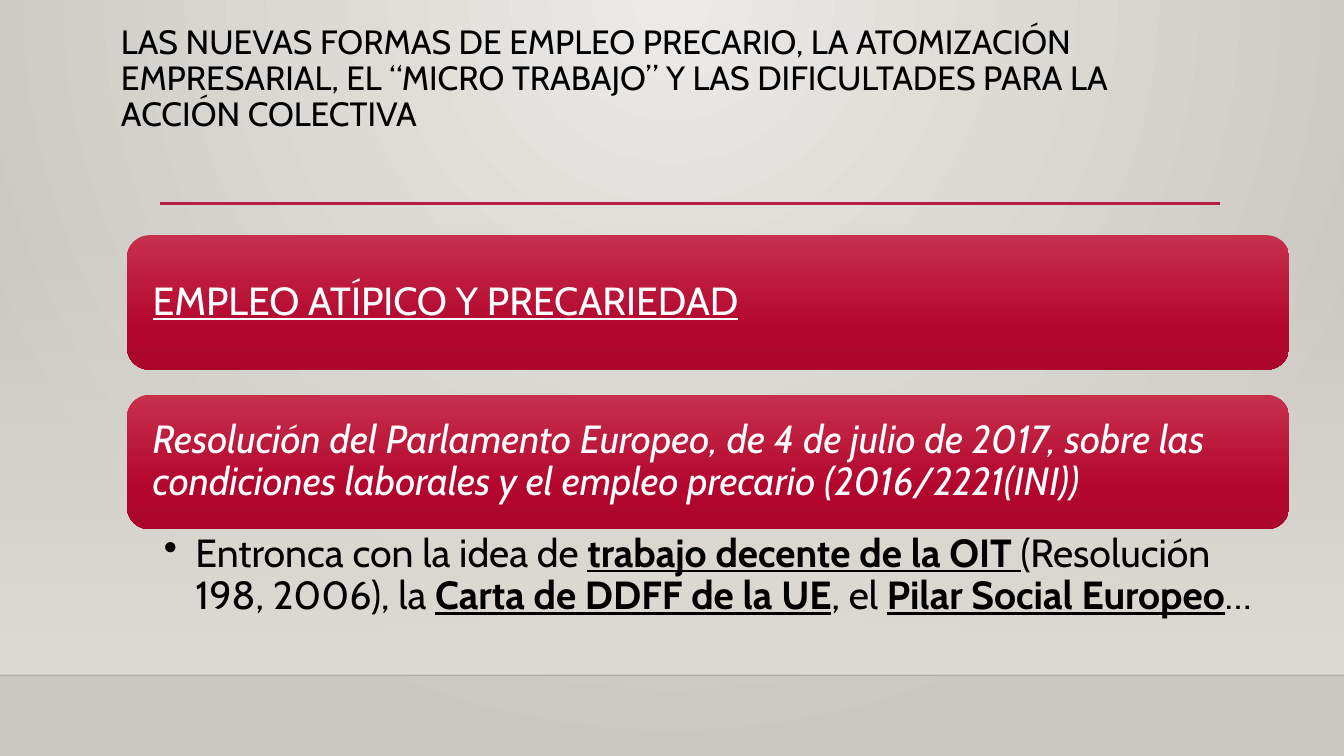
import pptx
import pptx.util
import pptx.dml.color
import pptx.enum.shapes
import pptx.enum.text
import pptx.oxml
import pptx.oxml.ns
from dataclasses import dataclass
from typing import Any

COLS, ROWS = 160, 90
WIDE, HIGH = pptx.util.Inches(13.33), pptx.util.Inches(7.5)
FONT = "Cabin"
HEX = {
    "black": "000000", "white": "FFFFFF", "rule": "B71E42", "edge": "000001",
    "pale": "ECEAE7", "stone": "CAC7C1", "wall": "DFDBD5",
    "rose": "C7304C", "red": "B3062F", "wine": "AA062C",
}
KIND = pptx.enum.shapes.MSO_SHAPE
ANCHOR = pptx.enum.text.MSO_ANCHOR
NS = pptx.oxml.ns.nsdecls("a")
LEFT, SPAN = 15.12, 138.36
TOP, TALL, STEP = 28, 16, 19


@dataclass
class Stop:
    at: int
    color: str
    alpha: int = 100


@dataclass
class Rule:
    left: float
    right: float
    row: float
    color: str
    width: float
    alpha: int = 100


@dataclass
class Bar:
    text: str
    under: bool = False
    slant: bool = False


@dataclass
class Piece:
    text: str
    strong: bool = False


RULES = [
    Rule(0, COLS, 80.4, "edge", 1, 20),
    Rule(19.08, 145.2, 24.24, "rule", 2.5),
]
BARS = [
    Bar("EMPLEO ATÍPICO Y PRECARIEDAD", under=True),
    Bar("Resolución del Parlamento Europeo, de 4 de julio de 2017, sobre las "
        "condiciones laborales y el empleo precario (2016/2221(INI))", slant=True),
]
TITLE = ("LAS NUEVAS FORMAS DE EMPLEO PRECARIO, LA ATOMIZACIÓN EMPRESARIAL, "
         "EL “MICRO TRABAJO” Y LAS DIFICULTADES PARA LA ACCIÓN COLECTIVA")
PIECES = [
    Piece("Entronca con la idea de "),
    Piece("trabajo decente de la OIT ", True),
    Piece("(Resolución 198, 2006), la "),
    Piece("Carta de DDFF de la UE", True),
    Piece(", el "),
    Piece("Pilar Social Europeo", True),
    Piece("…"),
]


def col(n: float) -> int:
    return round(WIDE * n / COLS)


def row(n: float) -> int:
    return round(HIGH * n / ROWS)


def rgb(name: str) -> Any:
    return pptx.dml.color.RGBColor.from_string(HEX[name])


def blend(fill: Any, root: Any, stops: list[Stop], round_: bool = False) -> None:
    fill.gradient()
    grad = root.find(".//" + pptx.oxml.ns.qn("a:gradFill"))
    marks = "".join(
        f'<a:gs pos="{s.at * 1000}"><a:srgbClr val="{HEX[s.color]}">'
        f'<a:alpha val="{s.alpha * 1000}"/></a:srgbClr></a:gs>' for s in stops)
    shade = ('<a:path path="circle"><a:fillToRect l="43000" r="43000" b="100000"/></a:path>'
             if round_ else '<a:lin ang="5400000" scaled="0"/>')
    fresh = pptx.oxml.parse_xml(
        f'<a:gradFill {NS} rotWithShape="1"><a:gsLst>{marks}</a:gsLst>{shade}</a:gradFill>')
    grad.getparent().replace(grad, fresh)


def block(slide: Any, kind: Any, x: float, y: float, w: float, h: float,
          stops: list[Stop]) -> Any:
    shape = slide.shapes.add_shape(kind, col(x), row(y), col(w), row(h))
    shape.shadow.inherit = False
    shape.line.fill.background()
    blend(shape.fill, shape._element.spPr, stops)
    return shape


def draw_rule(slide: Any, rule: Rule) -> None:
    line = slide.shapes.add_connector(
        pptx.enum.shapes.MSO_CONNECTOR.STRAIGHT,
        col(rule.left), row(rule.row), col(rule.right), row(rule.row))
    line.line.color.rgb = rgb(rule.color)
    line.line.width = pptx.util.Pt(rule.width)
    props = line._element.spPr
    tint = props.find(".//" + pptx.oxml.ns.qn("a:srgbClr"))
    tint.append(pptx.oxml.parse_xml(f'<a:alpha {NS} val="{rule.alpha * 1000}"/>'))
    props.append(pptx.oxml.parse_xml(f"<a:effectLst {NS}/>"))


def frame(shape: Any, side: float, end: float, edge: float, anchor: Any) -> Any:
    text = shape.text_frame
    text.word_wrap = True
    text.vertical_anchor = anchor
    text.margin_left, text.margin_right = col(side), col(end)
    text.margin_top = text.margin_bottom = row(edge)
    return text.paragraphs[0]


def style(para: Any, size: int, color: str) -> None:
    para.alignment = pptx.enum.text.PP_ALIGN.LEFT
    para.line_spacing = 0.9
    para.font.name = FONT
    para.font.size = pptx.util.Pt(size)
    para.font.color.rgb = rgb(color)


def draw_bar(slide: Any, bar: Bar, y: float) -> None:
    shape = block(slide, KIND.ROUNDED_RECTANGLE, LEFT, y, SPAN, TALL,
                  [Stop(0, "rose"), Stop(69, "red"), Stop(100, "wine")])
    para = frame(shape, 2.28, 2.28, 2.28, ANCHOR.MIDDLE)
    para.text = bar.text
    style(para, 28, "white")
    para.font.underline = bar.under
    para.font.italic = bar.slant


def draw_title(slide: Any) -> None:
    box = slide.shapes.add_textbox(col(13.2), row(2.4), col(124.56), row(15))
    para = frame(box, 1.2, 1.2, 0.6, ANCHOR.TOP)
    para.text = TITLE
    style(para, 24, "black")


def draw_note(slide: Any, y: float) -> None:
    box = slide.shapes.add_textbox(col(LEFT), row(y), col(SPAN), row(15.84))
    para = frame(box, 4.4, 2.64, 0.48, ANCHOR.TOP)
    props = para._p.get_or_add_pPr()
    props.set("marL", str(col(3.75)))
    props.set("indent", str(-col(3.75)))
    props.append(pptx.oxml.parse_xml(f'<a:buChar {NS} char="•"/>'))
    for piece in PIECES:
        run = para.add_run()
        run.text = piece.text
        run.font.bold = piece.strong
        run.font.underline = piece.strong
    style(para, 28, "black")


def main() -> None:
    deck = pptx.Presentation()
    deck.slide_width, deck.slide_height = WIDE, HIGH
    slide = deck.slides.add_slide(deck.slide_layouts[6])
    blend(slide.background.fill, slide._element,
          [Stop(0, "pale"), Stop(100, "stone")], round_=True)
    block(slide, KIND.RECTANGLE, 0, 26.52, COLS, 53.88,
          [Stop(0, "wall", 0), Stop(100, "wall")])
    for rule in RULES:
        draw_rule(slide, rule)
    draw_title(slide)
    for i, bar in enumerate(BARS):
        draw_bar(slide, bar, TOP + i * STEP)
    draw_note(slide, TOP + STEP + TALL)
    deck.save("out.pptx")


if __name__ == "__main__":
    main()
